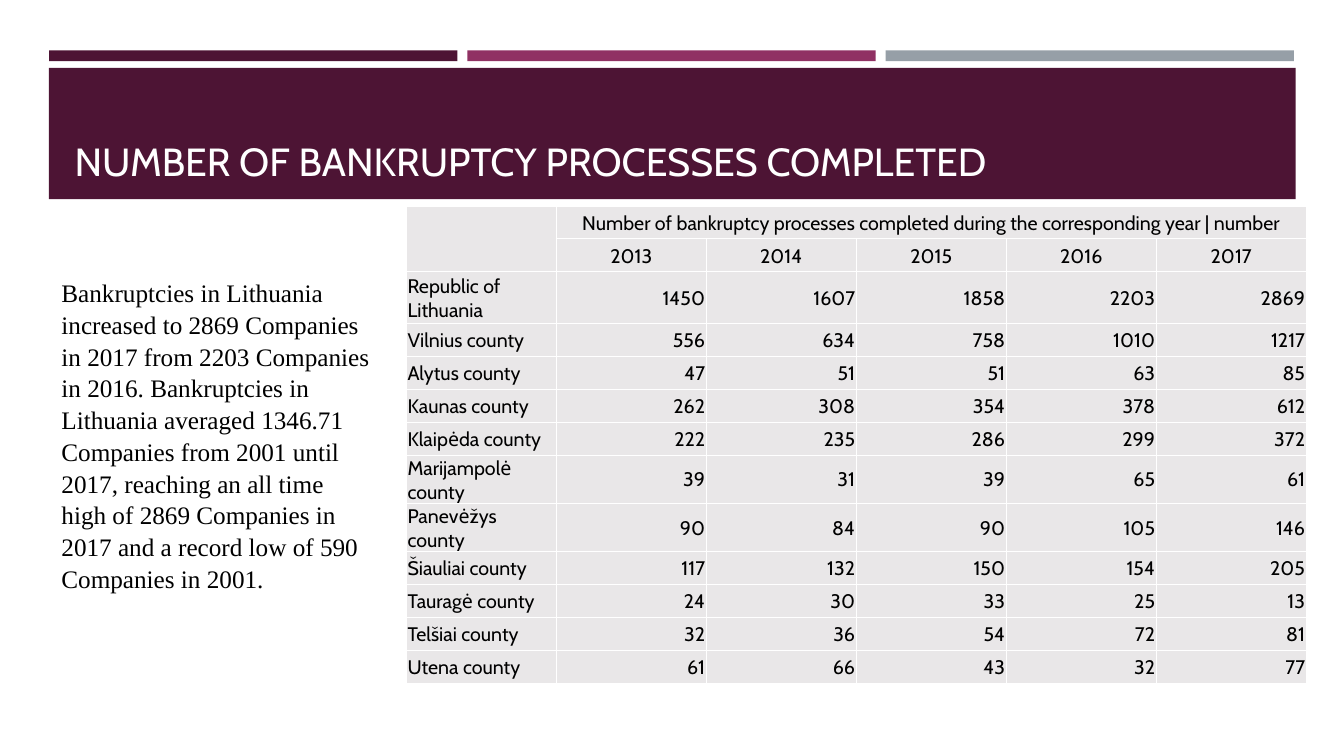
import pptx
import pptx.dml.color
import pptx.enum.shapes
import pptx.enum.text
import pptx.oxml
import pptx.oxml.ns
import pptx.util

Cm = pptx.util.Cm
Pt = pptx.util.Pt
RGBColor = pptx.dml.color.RGBColor
ALIGN = pptx.enum.text.PP_ALIGN
ANCHOR = pptx.enum.text.MSO_ANCHOR

PLUM = RGBColor(0x4D, 0x14, 0x34)
MAGENTA = RGBColor(0x90, 0x31, 0x63)
GREY = RGBColor(0x96, 0x9F, 0xA7)
CELL_GREY = RGBColor(0xE9, 0xE7, 0xE8)
WHITE = RGBColor(0xFF, 0xFF, 0xFF)
BLACK = RGBColor(0x00, 0x00, 0x00)

TITLE = "NUMBER OF BANKRUPTCY PROCESSES COMPLETED"
SUMMARY = (
    "Bankruptcies in Lithuania increased to 2869 Companies in 2017 from 2203 "
    "Companies in 2016. Bankruptcies in Lithuania averaged 1346.71 Companies "
    "from 2001 until 2017, reaching an all time high of 2869 Companies in 2017 "
    "and a record low of 590 Companies in 2001."
)
TABLE_HEADING = (
    "Number of bankruptcy processes completed during the corresponding year | number"
)
YEARS = [2013, 2014, 2015, 2016, 2017]
COUNTIES = {
    "Republic of Lithuania": [1450, 1607, 1858, 2203, 2869],
    "Vilnius county": [556, 634, 758, 1010, 1217],
    "Alytus county": [47, 51, 51, 63, 85],
    "Kaunas county": [262, 308, 354, 378, 612],
    "Klaipėda county": [222, 235, 286, 299, 372],
    "Marijampolė county": [39, 31, 39, 65, 61],
    "Panevėžys county": [90, 84, 90, 105, 146],
    "Šiauliai county": [117, 132, 150, 154, 205],
    "Tauragė county": [24, 30, 33, 25, 13],
    "Telšiai county": [32, 36, 54, 72, 81],
    "Utena county": [61, 66, 43, 32, 77],
}

TITLE_FONT = {"name": "Cabin", "size": Pt(28)}
TABLE_FONT = {"name": "Cabin", "size": Pt(14)}
SUMMARY_FONT = {"name": "Times New Roman", "size": Pt(18)}
CELL_FORMAT = {
    "vertical_anchor": ANCHOR.MIDDLE,
    "margin_left": Cm(0.03),
    "margin_top": Cm(0.03),
    "margin_right": Cm(0.03),
    "margin_bottom": Cm(0),
}


def apply_format(target, values):
    for name, value in values.items():
        setattr(target, name, value)


def write_text(frame, text, font, color, **paragraph_format):
    paragraph = frame.paragraphs[0]
    paragraph.text = text
    apply_format(paragraph, paragraph_format)
    apply_format(paragraph.font, font)
    paragraph.font.color.rgb = color


def add_band(slide, left, top, width, height, color):
    band = slide.shapes.add_shape(
        pptx.enum.shapes.MSO_SHAPE.RECTANGLE, Cm(left), Cm(top), Cm(width), Cm(height)
    )
    band.shadow.inherit = False
    band.fill.solid()
    band.fill.fore_color.rgb = color
    band.line.fill.background()


def add_text(slide, left, top, width, height, text, font, color, anchor, spacing):
    box = slide.shapes.add_textbox(Cm(left), Cm(top), Cm(width), Cm(height))
    apply_format(box.text_frame, {"word_wrap": True, "vertical_anchor": anchor})
    write_text(box.text_frame, text, font, color, line_spacing=spacing)


def add_borders(cell):
    properties = cell._tc.get_or_add_tcPr()
    for position, side in enumerate(("lnL", "lnR", "lnT", "lnB")):
        border = pptx.oxml.parse_xml(
            f'<a:{side} {pptx.oxml.ns.nsdecls("a")} w="12700"><a:solidFill>'
            f'<a:srgbClr val="{WHITE}"/></a:solidFill></a:{side}>'
        )
        properties.insert(position, border)


def fill_cell(cell, text, alignment):
    apply_format(cell, CELL_FORMAT)
    cell.fill.solid()
    cell.fill.fore_color.rgb = CELL_GREY
    add_borders(cell)
    write_text(cell.text_frame, text, TABLE_FONT, BLACK, alignment=alignment)


def add_county_table(slide):
    rows = [["", TABLE_HEADING, "", "", "", ""], ["", *YEARS]]
    rows += [[county, *counts] for county, counts in COUNTIES.items()]
    table = slide.shapes.add_table(
        len(rows), len(rows[0]), Cm(10.24), Cm(5.19), Cm(22.5), Cm(11.25)
    ).table
    apply_format(table, {"first_row": False, "horz_banding": False})
    for column in table.columns:
        column.width = Cm(3.78)
    for row in table.rows:
        row.height = Cm(0.83)
    table.rows[2].height = Cm(1.3)

    for row_index, values in enumerate(rows):
        for column_index, value in enumerate(values):
            if row_index < 2:
                alignment = ALIGN.CENTER
            else:
                alignment = ALIGN.RIGHT if column_index else ALIGN.LEFT
            fill_cell(table.cell(row_index, column_index), str(value), alignment)

    # Corner cell and the heading above the years
    table.cell(0, 0).merge(table.cell(1, 0))
    table.cell(0, 1).merge(table.cell(0, len(YEARS)))


def main():
    deck = pptx.Presentation()
    apply_format(deck, {"slide_width": Cm(33.87), "slide_height": Cm(19.05)})
    slide = deck.slides.add_slide(deck.slide_layouts[6])

    # Accent bars
    for index, color in enumerate((PLUM, MAGENTA, GREY)):
        add_band(slide, 1.24 + 10.54 * index, 1.27, 10.29, 0.27, color)

    # Title banner
    add_band(slide, 1.23, 1.71, 31.42, 3.31, PLUM)
    add_text(slide, 1.63, 1.96, 30.63, 2.82, TITLE, TITLE_FONT, WHITE, ANCHOR.BOTTOM, 1.0)

    # Bankruptcies by county and year
    add_county_table(slide)

    # Summary
    add_text(slide, 1.3, 6.83, 8.33, 7.95, SUMMARY, SUMMARY_FONT, BLACK, ANCHOR.TOP, 1.05)

    deck.save("out.pptx")


if __name__ == "__main__":
    main()
